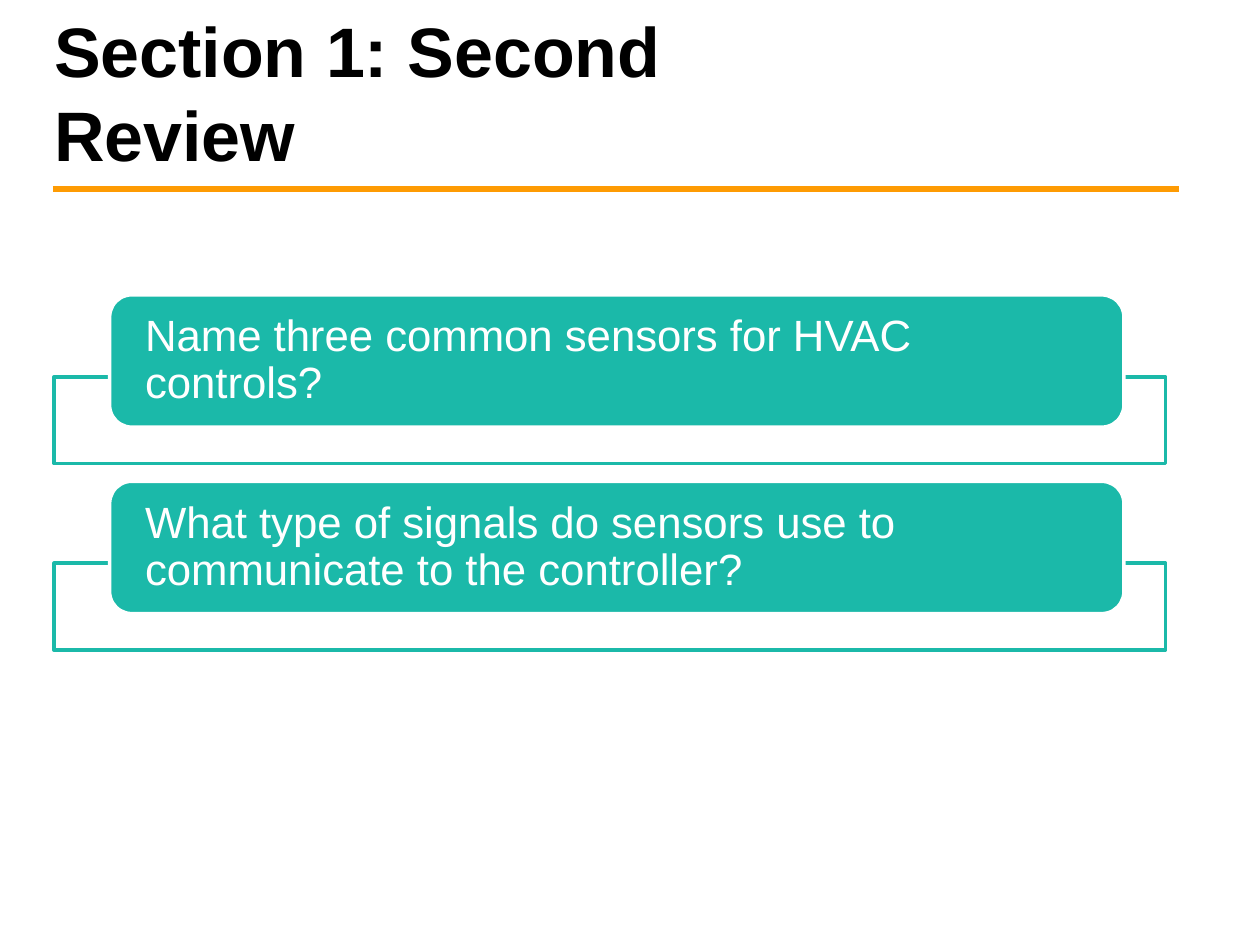
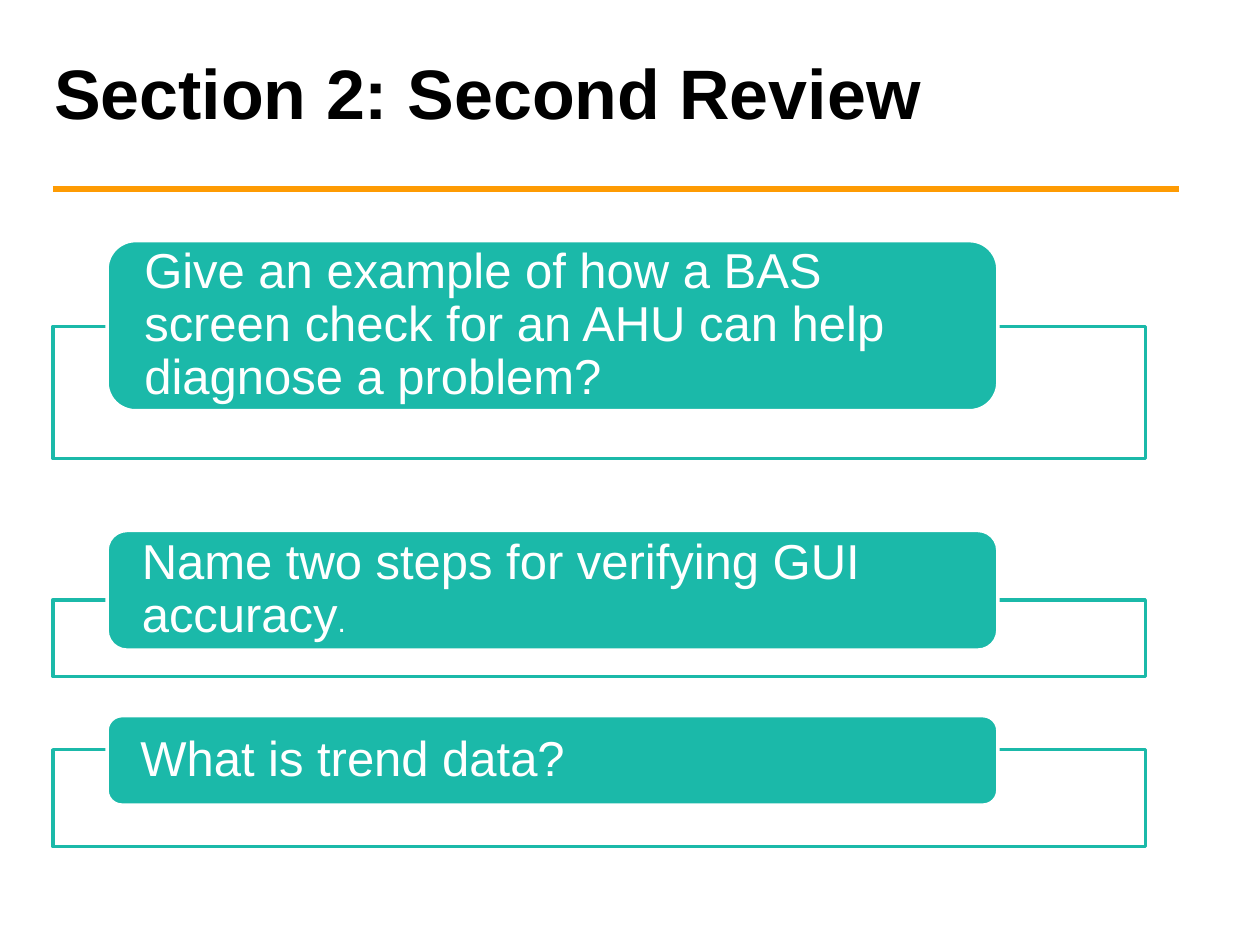
"""Build two review slides whose questions sit in pills over outlined frames."""
from lxml import etree
from pptx import Presentation
from pptx import util as u
from pptx.dml.color import RGBColor
from pptx.enum import shapes, text
from pptx.oxml.ns import qn

EMU_PER_PX = 9144
FONT = "Arial"
COLORS = {"title": "000000", "rule": "FE9B03", "teal": "1BB9A9", "white": "FFFFFF"}
TITLE_ONLY = 5


def px(length):
    return u.Emu(length * EMU_PER_PX)


def color(name):
    return RGBColor.from_string(COLORS[name])


def style_font(font, size, color_name, bold=False):
    font.name = FONT
    font.size = u.Pt(size)
    font.bold = bold
    font.color.rgb = color(color_name)


def add_rule(slide):
    rule = slide.shapes.add_connector(
        shapes.MSO_CONNECTOR.STRAIGHT, px(42), px(150), px(936), px(150))
    rule.line.color.rgb = color("rule")
    rule.line.width = u.Pt(4)
    etree.SubElement(rule._element.spPr, qn("a:effectLst"))


def set_title(slide, wording, width):
    title = slide.shapes.title
    title.left, title.top, title.width, title.height = px(33), px(33), px(width), px(80)
    frame = title.text_frame
    frame.text = wording
    frame.word_wrap = True
    frame.auto_size = text.MSO_AUTO_SIZE.NONE
    frame.vertical_anchor = text.MSO_ANCHOR.MIDDLE
    heading = frame.paragraphs[0]
    heading.alignment = text.PP_ALIGN.LEFT
    style_font(heading.runs[0].font, 40, "title", bold=True)


def add_block(slide, preset, box, fill, line):
    block = slide.shapes.add_shape(preset, *map(px, box))
    block.shadow.inherit = False
    block.fill.solid()
    block.fill.fore_color.rgb = color(fill)
    block.line.color.rgb = color(line)
    block.line.width = u.Pt(2)
    return block


def add_frame(slide, box):
    frame = add_block(slide, shapes.MSO_SHAPE.RECTANGLE, box, "white", "teal")
    fill_color = frame._element.spPr.find(qn("a:solidFill"))[0]
    etree.SubElement(fill_color, qn("a:alpha"), val="90000")


def add_pill(slide, box, runs):
    pill = add_block(slide, shapes.MSO_SHAPE.ROUNDED_RECTANGLE, box, "teal", "white")
    frame = pill.text_frame
    frame.word_wrap = True
    frame.vertical_anchor = text.MSO_ANCHOR.MIDDLE
    frame.margin_left = frame.margin_right = px(23)
    frame.margin_top = frame.margin_bottom = 0
    question = frame.paragraphs[0]
    question.alignment = text.PP_ALIGN.LEFT
    question.line_spacing = 0.9
    for wording, size in runs:
        run = question.add_run()
        run.text = wording
        style_font(run.font, size, "white")


def add_review(deck, title, title_width, frame_span, pill_span, questions):
    slide = deck.slides.add_slide(deck.slide_layouts[TITLE_ONLY])
    add_rule(slide)
    set_title(slide, title, title_width)
    for (frame_top, frame_height), (pill_top, pill_height), runs in questions:
        add_frame(slide, (frame_span[0], frame_top, frame_span[1], frame_height))
        add_pill(slide, (pill_span[0], pill_top, pill_span[1], pill_height), runs)


def main():
    deck = Presentation()
    deck.slide_width, deck.slide_height = px(1000), px(750)
    add_review(deck, "Section 1: Second Review", 700, (43, 882), (87, 805), [
        ((299, 69), (234, 105),
         [("Name three common sensors for HVAC controls?", 25)]),
        ((447, 69), (382, 105),
         [("What type of signals do sensors use to communicate to the controller?", 25)]),
    ])
    add_review(deck, "Section 2: Second Review", 725, (42, 867), (85, 707), [
        ((259, 105), (191, 135),
         [("Give an example of how a BAS screen check for an AHU can help "
           "diagnose a problem?", 28)]),
        ((476, 61), (421, 95),
         [("Name two steps for verifying GUI accuracy", 28), (".", 17)]),
        ((595, 77), (568, 71), [("What is trend data?", 28)]),
    ])
    deck.save("out.pptx")


if __name__ == "__main__":
    main()
